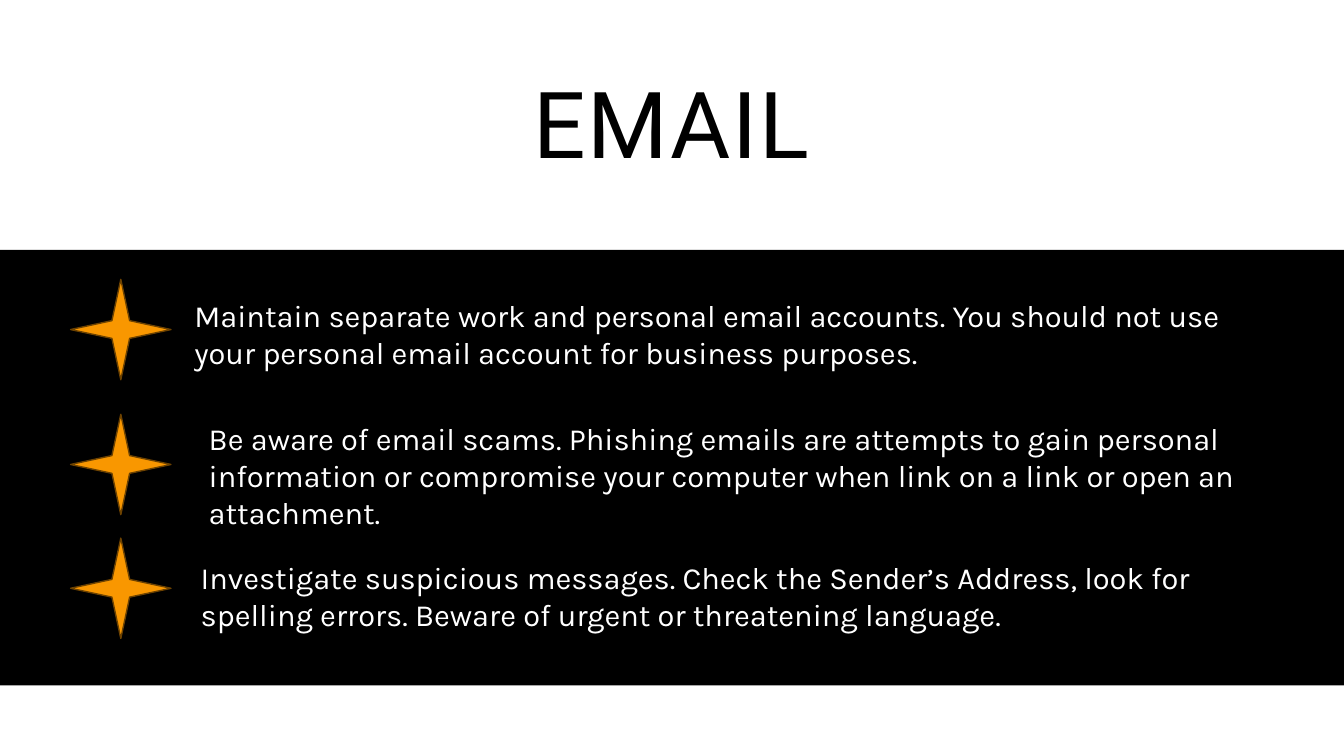
from dataclasses import dataclass

from pptx import Presentation
from pptx.dml.color import RGBColor
from pptx.enum.shapes import MSO_SHAPE
from pptx.enum.text import MSO_ANCHOR, MSO_AUTO_SIZE, PP_ALIGN
from pptx.util import Cm, Pt


@dataclass(frozen=True)
class Theme:
    white: RGBColor = RGBColor(0xFF, 0xFF, 0xFF)
    black: RGBColor = RGBColor(0, 0, 0)
    star_fill: RGBColor = RGBColor(0xF9, 0x97, 0x00)
    star_line: RGBColor = RGBColor(0x6D, 0x42, 0x00)
    title_font: str = "Roboto"
    body_font: str = "Karla"
    title_size: Pt = Pt(66)
    body_size: Pt = Pt(22)


THEME = Theme()
PAGE_WIDTH, PAGE_HEIGHT = Cm(33.87), Cm(19.05)
STAR_LEFT, STAR_SIZE = Cm(1.78), Cm(2.53)
TIP_WIDTH = Cm(27.86)

# Star top, then text left, top and height in centimetres, then the wording
TIPS = [
    (7.04, 4.65, 7.35, 2.13,
     "Maintain separate work and personal email accounts. You should not use "
     "your personal email account for business purposes."),
    (10.44, 5.01, 10.45, 3.07,
     "Be aware of email scams. Phishing emails are attempts to gain personal "
     "information or compromise your computer when link on a link or open an "
     "attachment."),
    (13.56, 4.81, 13.96, 2.13,
     "Investigate suspicious messages. Check the Sender’s Address, look for "
     "spelling errors. Beware of urgent or threatening language."),
]


def style_font(font, name, size, color):
    font.name = name
    font.size = size
    font.color.rgb = color


def set_title(page, text):
    title = page.shapes.title
    title.left, title.top = Cm(2.67), Cm(0.89)
    title.width, title.height = Cm(28.52), Cm(4.72)
    frame = title.text_frame
    frame.auto_size = MSO_AUTO_SIZE.NONE
    frame.vertical_anchor = MSO_ANCHOR.MIDDLE
    para = frame.paragraphs[0]
    para.alignment = PP_ALIGN.CENTER
    para.line_spacing = 0.9
    style_font(para.font, THEME.title_font, THEME.title_size, THEME.black)
    span = para.add_run()
    span.text = text
    # Letter spacing in hundredths of a point
    span._r.get_or_add_rPr().set("spc", "120")


def add_filled_shape(page, kind, left, top, width, height, color):
    shape = page.shapes.add_shape(kind, left, top, width, height)
    shape.shadow.inherit = False
    shape.fill.solid()
    shape.fill.fore_color.rgb = color
    shape.line.fill.background()
    return shape


def add_band(page, top, height, color):
    """Add a rectangle across the full page width."""
    return add_filled_shape(
        page, MSO_SHAPE.RECTANGLE, 0, top, PAGE_WIDTH, height, color)


def send_to_back(page, shape):
    # The first two children of the shape tree are its own properties
    page.shapes._spTree.insert(2, shape._element)


def add_star(page, top):
    star = add_filled_shape(page, MSO_SHAPE.STAR_4_POINT, STAR_LEFT, top,
                            STAR_SIZE, STAR_SIZE, THEME.star_fill)
    star.line.color.rgb = THEME.star_line
    star.line.width = Pt(1)


def add_tip(page, left, top, height, text):
    box = page.shapes.add_textbox(left, top, TIP_WIDTH, height)
    frame = box.text_frame
    frame.word_wrap = True
    frame.auto_size = MSO_AUTO_SIZE.SHAPE_TO_FIT_TEXT
    para = frame.paragraphs[0]
    para.text = text
    style_font(para.font, THEME.body_font, THEME.body_size, THEME.white)


def main():
    deck = Presentation()
    deck.slide_width, deck.slide_height = PAGE_WIDTH, PAGE_HEIGHT
    title_only = deck.slide_layouts.get_by_name("Title Only")
    page = deck.slides.add_slide(title_only)
    page.background.fill.solid()
    page.background.fill.fore_color.rgb = THEME.black

    send_to_back(page, add_band(page, 0, PAGE_HEIGHT, THEME.white))
    set_title(page, "EMAIL")
    add_band(page, Cm(6.3), Cm(10.97), THEME.black)
    for star_top, left, top, height, text in TIPS:
        add_star(page, Cm(star_top))
        add_tip(page, Cm(left), Cm(top), Cm(height), text)

    deck.save("out.pptx")


if __name__ == "__main__":
    main()
